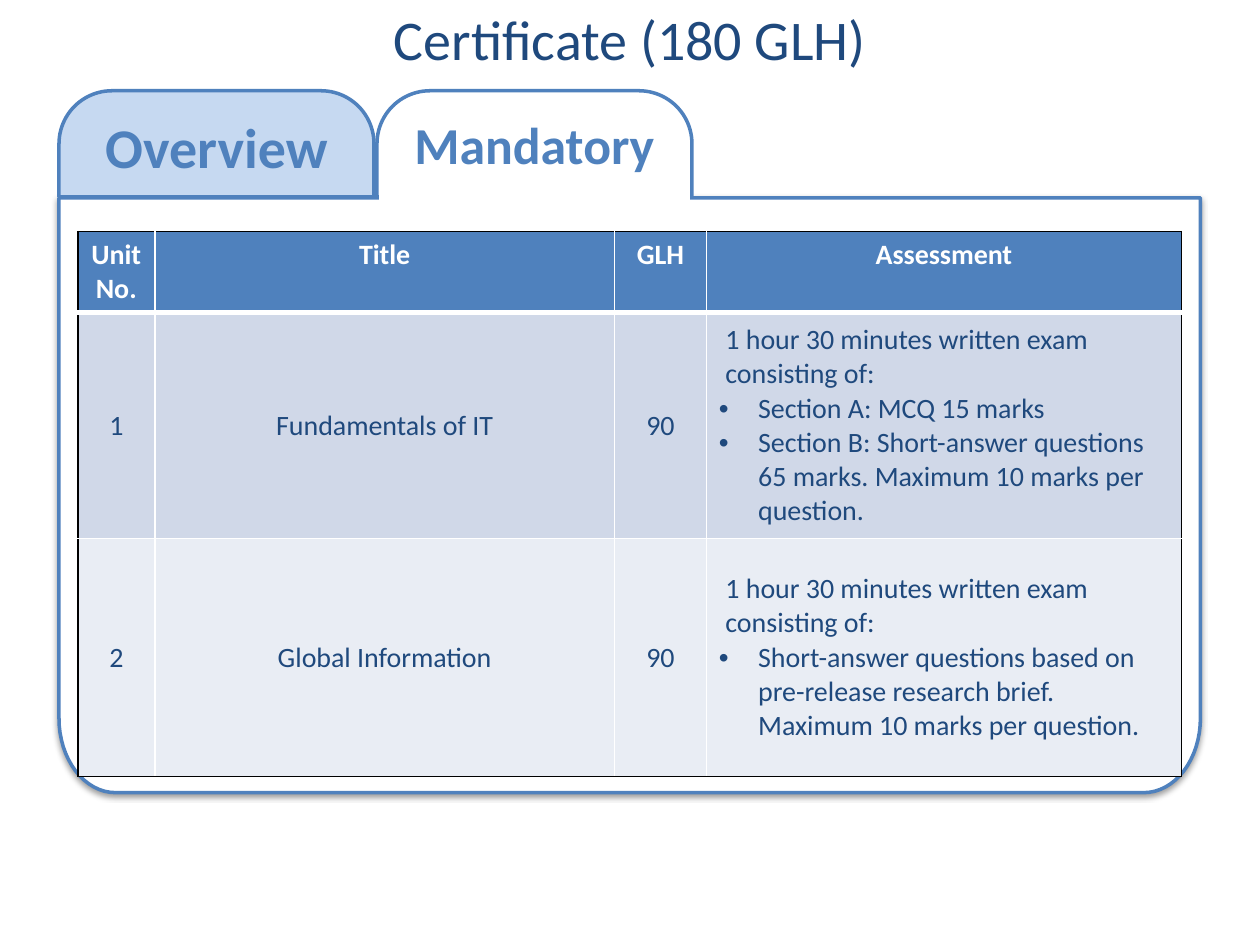
import math

from lxml import etree
from pptx import Presentation
from pptx.dml.color import RGBColor
from pptx.enum.shapes import MSO_SHAPE
from pptx.enum.text import MSO_ANCHOR, PP_ALIGN
from pptx.oxml import parse_xml
from pptx.oxml.ns import nsdecls, qn
from pptx.util import Cm, Pt

CENTER, LEFT = PP_ALIGN.CENTER, PP_ALIGN.LEFT
TOP, MIDDLE = MSO_ANCHOR.TOP, MSO_ANCHOR.MIDDLE
RECTANGLE, TAB = MSO_SHAPE.RECTANGLE, MSO_SHAPE.ROUND_2_SAME_RECTANGLE

COLORS = {"white": "FFFFFF", "black": "000000", "navy": "1F497D", "blue": "4F81BD",
          "sky": "C6D9F1", "band_dark": "D0D8E8", "band_light": "E9EDF4"}
FONT = {"name": "Calibri", "bold": False}
EXAM = "1 hour 30 minutes written exam"
HEADERS = ["Unit\vNo.", "Title", "GLH", "Assessment"]
UNITS = [
    ("1", "Fundamentals of IT", "90",
     ["Section A: MCQ 15 marks",
      "Section B: Short-answer questions 65 marks. Maximum 10 marks per question."]),
    ("2", "Global Information", "90",
     ["Short-answer questions based on pre-release research brief. "
      "Maximum 10 marks per question."]),
]


def color(name):
    """Return the named palette colour."""
    return RGBColor.from_string(COLORS[name])


def set_values(target, values):
    """Set every attribute in a dict of format values."""
    for name, value in values.items():
        setattr(target, name, value)


def write(paragraph, text, size, color_name, bold=False, alignment=CENTER):
    """Fill one paragraph with formatted text."""
    paragraph.text = text
    paragraph.alignment = alignment
    set_values(paragraph.font, {**FONT, "size": Pt(size), "bold": bold})
    paragraph.font.color.rgb = color(color_name)


def paint(shape, fill, line):
    """Give a shape a flat fill and a 2 pt outline."""
    shape.shadow.inherit = False
    shape.fill.solid()
    shape.fill.fore_color.rgb = color(fill)
    shape.line.color.rgb = color(line)
    shape.line.width = Pt(2)


def add_title(slide, left, top, width, height):
    """Place the slide title."""
    title = slide.shapes.title
    set_values(title, {"left": Cm(left), "top": Cm(top),
                       "width": Cm(width), "height": Cm(height)})
    title.text_frame.vertical_anchor = MIDDLE
    write(title.text_frame.paragraphs[0], "Certificate (180 GLH)", 32, "navy")


def add_panel(slide, left, top, width, height):
    """Draw the folder body with rounded bottom corners and a soft shadow."""
    radius_x, radius_y, steps = 1.14, 1.5, 16
    points = [(left + width, top)]
    for center_x, start in ((left + width - radius_x, 0), (left + radius_x, 90)):
        for step in range(steps + 1):
            angle = math.radians(start + 90 * step / steps)
            points.append((center_x + radius_x * math.cos(angle),
                           top + height - radius_y + radius_y * math.sin(angle)))
    builder = slide.shapes.build_freeform(Cm(left), Cm(top))
    builder.add_line_segments([(Cm(x), Cm(y)) for x, y in points], close=True)
    panel = builder.convert_to_shape()
    paint(panel, "white", "blue")
    effects = panel.element.spPr.find(qn("a:effectLst"))
    effects.append(parse_xml(
        f'<a:outerShdw {nsdecls("a")} blurRad="{Pt(3.1)}" dist="{Pt(1.6)}" dir="5400000" '
        f'rotWithShape="0"><a:srgbClr val="{COLORS["black"]}"><a:alpha val="38000"/>'
        '</a:srgbClr></a:outerShdw>'))


def add_tab(slide, left, top, width, height, text, size, fill):
    """Draw one labelled folder tab."""
    tab = slide.shapes.add_shape(TAB, Cm(left), Cm(top), Cm(width), Cm(height))
    tab.adjustments[0] = 0.5
    tab.adjustments[1] = 0
    paint(tab, fill, "blue")
    set_values(tab.text_frame, {"word_wrap": True, "vertical_anchor": TOP})
    write(tab.text_frame.paragraphs[0], text, size, "blue", bold=True)


def add_tab_opening(slide, left, top, width, height):
    """Cover the line between the active tab and the panel."""
    opening = slide.shapes.add_shape(RECTANGLE, Cm(left), Cm(top), Cm(width), Cm(height))
    paint(opening, "white", "white")


def indent(paragraph, margin, bullet=False):
    """Indent a paragraph, hanging a bullet in the margin if wanted."""
    properties = paragraph._p.get_or_add_pPr()
    properties.set("marL", str(Cm(margin)))
    properties.set("indent", str(-Cm(margin) if bullet else 0))
    if bullet:
        etree.SubElement(properties, qn("a:buFont")).set("typeface", "Arial")
        etree.SubElement(properties, qn("a:buChar")).set("char", "•")


def set_borders(cell, borders):
    """Draw cell borders from a dict of side to colour and width."""
    properties = cell._tc.get_or_add_tcPr()
    for index, (side, (color_name, width)) in enumerate(borders.items()):
        properties.insert(index, parse_xml(
            f'<a:ln{side} {nsdecls("a")} w="{Pt(width)}"><a:solidFill>'
            f'<a:srgbClr val="{COLORS[color_name]}"/></a:solidFill></a:ln{side}>'))


def write_assessment(cell, points):
    """Write the exam summary and its bulleted sections."""
    frame = cell.text_frame
    for index, text in enumerate([EXAM, "consisting of:", *points]):
        paragraph = frame.add_paragraph() if index else frame.paragraphs[0]
        bullet = index > 1
        indent(paragraph, 0.79 if bullet else 0.13, bullet)
        write(paragraph, text, 16, "navy", alignment=LEFT)


def add_units_table(slide, left, top, width, height):
    """Build the table of mandatory units."""
    columns, rows = [1.55, 9.27, 1.85, 9.58], [1.55, 4.55, 4.8]
    table = slide.shapes.add_table(len(rows), len(columns), Cm(left), Cm(top),
                                   Cm(width), Cm(height)).table
    for column, size in zip(table.columns, columns):
        column.width = Cm(size)
    for row, size in zip(table.rows, rows):
        row.height = Cm(size)
    last_row, last_column = len(rows) - 1, len(columns) - 1
    fills = ["blue", "band_dark", "band_light"]
    for row, values in enumerate([HEADERS, *UNITS]):
        for column, value in enumerate(values):
            cell = table.cell(row, column)
            cell.vertical_anchor = MIDDLE if row else TOP
            cell.fill.solid()
            cell.fill.fore_color.rgb = color(fills[row])
            set_borders(cell, {
                "L": ("white" if column else "black", 1),
                "R": ("black" if column == last_column else "white", 1),
                "T": ("white" if row else "black", 3 if row == 1 else 1),
                "B": ("black" if row == last_row else "white", 1 if row else 3)})
            if row and column == last_column:
                write_assessment(cell, value)
            else:
                write(cell.text_frame.paragraphs[0], value, 16,
                      "navy" if row else "white", bold=row == 0)


def main():
    """Build and save the slide."""
    presentation = Presentation()
    set_values(presentation, {"slide_width": Cm(25.4), "slide_height": Cm(19.05)})
    slide = presentation.slides.add_slide(presentation.slide_layouts[5])
    add_title(slide, 0, -0.23, 25.4, 2.01)
    add_panel(slide, 1.19, 3.99, 23.01, 11.99)
    add_tab(slide, 7.6, 1.83, 6.35, 2.14, "Mandatory", 29.6, "white")
    add_tab(slide, 1.19, 1.83, 6.35, 2.14, "Overview", 32, "sky")
    add_units_table(slide, 1.57, 4.67, 22.25, 10.9)
    add_tab_opening(slide, 7.67, 3.76, 6.2, 0.43)
    presentation.save("out.pptx")


if __name__ == "__main__":
    main()
